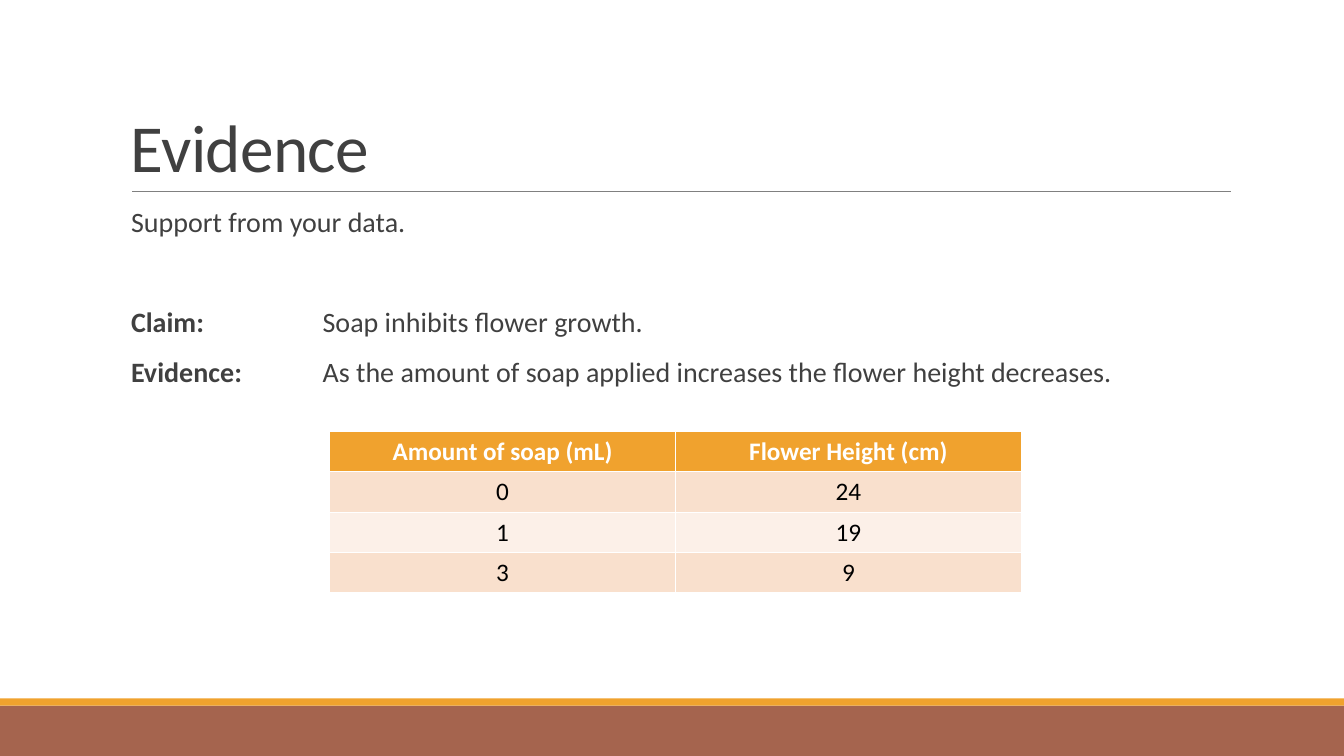
from lxml.etree import SubElement
from pptx import Presentation
from pptx.dml.color import RGBColor
from pptx.enum.shapes import MSO_CONNECTOR as Connector, MSO_SHAPE as Shape
from pptx.enum.text import MSO_ANCHOR as Anchor, PP_ALIGN as Align
from pptx.oxml.ns import qn
from pptx.util import Inches, Pt

ORANGE, BROWN, DARK, GREY = "F0A22E", "A5644E", "404040", "808080"
WHITE, BLACK = "FFFFFF", "000000"
BANDS = ("F9E0CD", "FCF0E8")

STATEMENTS = [
    ("", "Support from your data.", 12),
    ("Claim:", "Soap inhibits flower growth.", 48),
    ("Evidence:", "As the amount of soap applied increases the flower height decreases.", 12),
]
MEASUREMENTS = [
    ("Amount of soap (mL)", "Flower Height (cm)"),
    ("0", "24"),
    ("1", "19"),
    ("3", "9"),
]


def color(hex_value):
    return RGBColor.from_string(hex_value)


def apply_format(target, values):
    for name, value in values.items():
        setattr(target, name, value)


def add_run(paragraph, text, size, hex_value, bold=False):
    run = paragraph.add_run()
    run.text = text
    apply_format(run.font, {"name": "Calibri", "size": Pt(size), "bold": bold})
    run.font.color.rgb = color(hex_value)
    return run


def add_band(slide, top, height, hex_value):
    band = slide.shapes.add_shape(
        Shape.RECTANGLE, 0, Inches(top), Inches(13.33), Inches(height))
    band.shadow.inherit = False
    band.fill.solid()
    band.fill.fore_color.rgb = color(hex_value)
    band.line.fill.background()


def add_rule(slide, left, right, top):
    rule = slide.shapes.add_connector(
        Connector.STRAIGHT, Inches(left), Inches(top), Inches(right), Inches(top))
    rule.line.color.rgb = color(GREY)
    rule.line.width = Pt(0.5)
    SubElement(rule._element.spPr, qn("a:effectLst"))


def add_frame(slide, left, top, width, height, values):
    frame = slide.shapes.add_textbox(
        Inches(left), Inches(top), Inches(width), Inches(height)).text_frame
    apply_format(frame, {"word_wrap": True, **values})
    return frame


def add_title(slide, text):
    frame = add_frame(slide, 1.2, 0.31, 11, 1.59, {"vertical_anchor": Anchor.BOTTOM})
    heading = frame.paragraphs[0]
    heading.line_spacing = 0.85
    run = add_run(heading, text, 48, DARK)
    run.font._element.set("spc", "-50")


def add_tab_stop(paragraph, position):
    stops = SubElement(paragraph._p.get_or_add_pPr(), qn("a:tabLst"))
    SubElement(stops, qn("a:tab"), pos=str(Inches(position)), algn="l")


def add_statements(slide, statements):
    frame = add_frame(slide, 1.3, 2.02, 10.9, 4.4, {"margin_left": 0, "margin_right": 0})
    for index, (label, text, space_before) in enumerate(statements):
        statement = frame.add_paragraph() if index else frame.paragraphs[0]
        apply_format(statement, {
            "line_spacing": 0.9,
            "space_before": Pt(space_before),
            "space_after": Pt(2),
        })
        if label:
            add_tab_stop(statement, 1.9)
            add_run(statement, label, 20, DARK, bold=True)
            text = "\t" + text
        add_run(statement, text, 20, DARK)


def add_measurements(slide, rows):
    row_height, column_width = 0.4, 3.43
    columns = len(rows[0])
    table = slide.shapes.add_table(
        len(rows), columns, Inches(3.27), Inches(4.28),
        Inches(column_width * columns), Inches(row_height * len(rows))).table
    for row_index, row in enumerate(rows):
        header = row_index == 0
        for column_index, text in enumerate(row):
            cell = table.cell(row_index, column_index)
            cell.fill.solid()
            cell.fill.fore_color.rgb = color(ORANGE if header else BANDS[(row_index - 1) % 2])
            paragraph = cell.text_frame.paragraphs[0]
            paragraph.alignment = Align.CENTER
            add_run(paragraph, text, 18, WHITE if header else BLACK, bold=header)


def main():
    deck = Presentation()
    apply_format(deck, {"slide_width": Inches(13.33), "slide_height": Inches(7.5)})
    slide = deck.slides.add_slide(deck.slide_layouts[6])
    add_band(slide, 7, 0.5, BROWN)
    add_band(slide, 6.93, 0.07, ORANGE)
    add_rule(slide, 1.31, 12.21, 1.9)
    add_title(slide, "Evidence")
    add_statements(slide, STATEMENTS)
    add_measurements(slide, MEASUREMENTS)
    deck.save("out.pptx")


if __name__ == "__main__":
    main()
